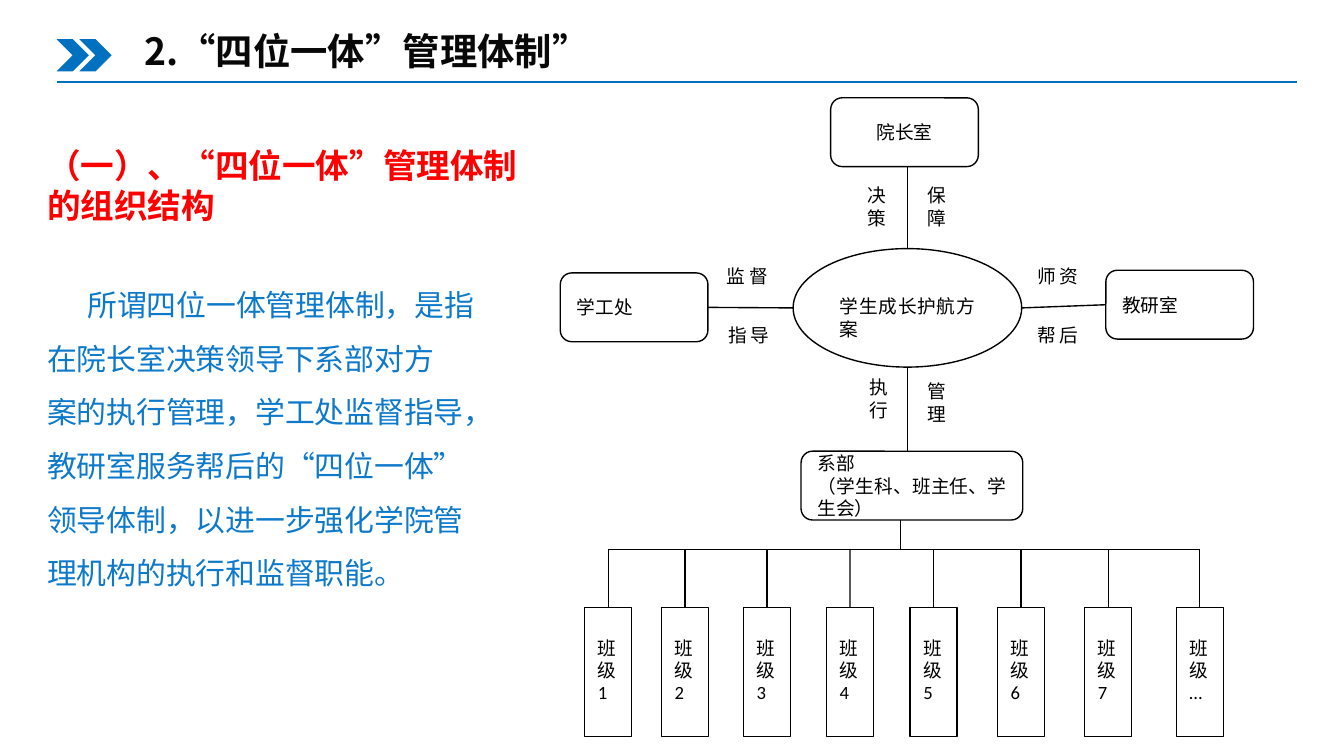
"""Build a slide on the organisation of the "four in one" management system."""
from dataclasses import dataclass

from lxml import etree
from pptx import Presentation
from pptx.dml.color import RGBColor
from pptx.enum.lang import MSO_LANGUAGE_ID
from pptx.enum.shapes import MSO_CONNECTOR, MSO_SHAPE
from pptx.enum.text import MSO_ANCHOR, MSO_AUTO_SIZE, PP_ALIGN
from pptx.oxml.ns import qn
from pptx.util import Cm, Pt

CHEVRON, OVAL = MSO_SHAPE.CHEVRON, MSO_SHAPE.OVAL
RECT, ROUNDED = MSO_SHAPE.RECTANGLE, MSO_SHAPE.ROUNDED_RECTANGLE
STRAIGHT = MSO_CONNECTOR.STRAIGHT
TOP, MIDDLE = MSO_ANCHOR.TOP, MSO_ANCHOR.MIDDLE
LEFT, CENTER, JUSTIFY = PP_ALIGN.LEFT, PP_ALIGN.CENTER, PP_ALIGN.JUSTIFY
FIT = MSO_AUTO_SIZE.SHAPE_TO_FIT_TEXT
CHINESE = MSO_LANGUAGE_ID.SIMPLIFIED_CHINESE
SIDE_TOP, SIDE_LEFT, SIDE_RIGHT = 0, 1, 3


@dataclass(frozen=True)
class Style:
    font: str
    size: float
    color: str
    bold: bool = False


@dataclass(frozen=True)
class Theme:
    east_asian: str = "Noto Sans CJK SC"
    title: Style = Style("Noto Sans CJK SC", 20, "080808", True)
    heading: Style = Style("Arial", 18, "FF0000", True)
    body: Style = Style("Arial", 16, "0D79CA")
    diagram: Style = Style("Calibri", 10, "000000")
    chevron: str = "0070C0"
    rule: str = "006EBC"
    ink: str = "000000"
    paper: str = "FFFFFF"
    line_width: float = 0.75


THEME = Theme()

TITLE = ["2.“四位一体”管理体制”"]
HEADING = ["（一）、“四位一体”管理体制", "的组织结构"]
BODY = [
    "所谓四位一体管理体制，是指",
    "在院长室决策领导下系部对方",
    "案的执行管理，学工处监督指导，",
    "教研室服务帮后的“四位一体”",
    "领导体制，以进一步强化学院管",
    "理机构的执行和监督职能。",
]
PLAN = ["学生成长护航方案"]
STUDENT_OFFICE = ["学工处"]
DEAN_OFFICE = ["院长室"]
TEACHING_OFFICE = ["教研室"]
DEPARTMENT = ["系部", "（学生科、班主任、学生会）"]
DOWN_LABELS = [("决 策", 16.15, 3.38), ("保 障", 17.27, 3.38),
               ("执 行", 16.18, 7.01), ("管 理", 17.27, 7.09)]
ACROSS_LABELS = [("监 督", 13.49, 4.88), ("指 导", 13.51, 5.99),
                 ("师 资", 19.35, 4.88), ("帮 后", 19.35, 5.99)]
CLASSES = [("1", 11.05), ("2", 12.5), ("3", 14.05), ("4", 15.62),
           ("5", 17.2), ("6", 18.85), ("7", 20.5), ("…", 22.23)]

OFFICE_SIZE = (2.79, 1.3)
DOWN_SIZE = (0.83, 1.17)
ACROSS_SIZE = (1.4, 0.74)
CLASS_SIZE = (0.89, 2.44)
CLASS_TOP, BUS_Y = 11.48, 10.39
PLAN_AT = (14.99, 4.7, 4.32, 2.24)
DEPARTMENT_AT = (15.14, 8.53, 4.19, 1.3)
DEAN_AT = (15.7, 1.85, *OFFICE_SIZE)
LOW_INSET = 0.55


def rgb(value):
    return RGBColor.from_string(value)


def write(frame, lines, style, align, spacing=None, first_indent=0):
    for number, line in enumerate(lines):
        paragraph = frame.add_paragraph() if number else frame.paragraphs[0]
        properties = paragraph._p.get_or_add_pPr()
        properties.set("marL", "0")
        properties.set("indent", "0" if number else str(Cm(first_indent)))
        etree.SubElement(properties, qn("a:buNone"))
        paragraph.alignment = align
        paragraph.space_before = Pt(0)
        if spacing:
            paragraph.line_spacing = spacing
        run = paragraph.add_run()
        run.text = line
        run.font.name = style.font
        east_asian = etree.SubElement(run.font._element, qn("a:ea"))
        east_asian.set("typeface", THEME.east_asian)
        run.font.size = Pt(style.size)
        run.font.bold = style.bold
        run.font.color.rgb = rgb(style.color)
        run.font.language_id = CHINESE


def fill_placeholder(holder, box, lines, style, align, anchor, spacing=None, first_indent=0):
    holder.left, holder.top, holder.width, holder.height = map(Cm, box)
    frame = holder.text_frame
    frame.margin_left = frame.margin_right = Cm(0.25)
    frame.margin_top = frame.margin_bottom = Cm(0.25)
    frame.word_wrap = False
    frame.auto_size = FIT
    frame.vertical_anchor = anchor
    write(frame, lines, style, align, spacing, first_indent)


def add_box(slide, kind, box, fill, outline=None):
    shape = slide.shapes.add_shape(kind, *map(Cm, box))
    shape.shadow.inherit = False
    shape.fill.solid()
    shape.fill.fore_color.rgb = rgb(fill)
    if outline:
        shape.line.color.rgb = rgb(outline)
        shape.line.width = Pt(THEME.line_width)
    else:
        shape.line.fill.background()
    return shape


def add_node(slide, kind, box, lines, outline=THEME.ink, anchor=MIDDLE,
             align=JUSTIFY, top_inset=0.13, vertical=False):
    node = add_box(slide, kind, box, THEME.paper, outline)
    frame = node.text_frame
    frame.word_wrap = True
    frame.vertical_anchor = anchor
    frame.margin_left = frame.margin_right = Cm(0.25)
    frame.margin_top, frame.margin_bottom = Cm(top_inset), Cm(0.13)
    if vertical:
        frame._txBody.bodyPr.set("vert", "eaVert")
    write(frame, lines, THEME.diagram, align)
    return node


def add_line(slide, start, end, color=THEME.ink):
    line = slide.shapes.add_connector(STRAIGHT, *map(Cm, (*start, *end)))
    line.line.color.rgb = rgb(color)
    line.line.width = Pt(THEME.line_width)
    etree.SubElement(line._element.spPr, qn("a:effectLst"))
    return line


def add_header(slide):
    for left in (1.07, 1.5):
        add_box(slide, CHEVRON, (left, 0.74, 0.61, 0.61), THEME.chevron)
    add_line(slide, (1.07, 1.55), (24.51, 1.55), THEME.rule)


def add_plan(slide):
    left, top, width, height = PLAN_AT
    middle_x, middle_y = left + width / 2, top + height / 2
    add_node(slide, OVAL, PLAN_AT, PLAN, anchor=TOP, top_inset=LOW_INSET)
    student = add_node(slide, ROUNDED, (10.59, 5.16, *OFFICE_SIZE), STUDENT_OFFICE)
    teaching = add_node(slide, ROUNDED, (20.9, 5.11, *OFFICE_SIZE), TEACHING_OFFICE)
    add_node(slide, ROUNDED, DEAN_AT, DEAN_OFFICE, align=CENTER)
    add_node(slide, ROUNDED, DEPARTMENT_AT, DEPARTMENT)

    student_link = add_line(slide, (13.39, middle_y), (left, middle_y))
    student_link.begin_connect(student, SIDE_RIGHT)
    teaching_link = add_line(slide, (left + width, middle_y), (20.9, middle_y))
    teaching_link.end_connect(teaching, SIDE_LEFT)
    add_line(slide, (middle_x, DEAN_AT[1] + DEAN_AT[3]), (middle_x, top))
    add_line(slide, (middle_x, top + height), (middle_x, DEPARTMENT_AT[1]))

    for labels, size, anchor, vertical in ((DOWN_LABELS, DOWN_SIZE, MIDDLE, True),
                                           (ACROSS_LABELS, ACROSS_SIZE, TOP, False)):
        for label, x, y in labels:
            add_node(slide, RECT, (x, y, *size), [label], THEME.paper, anchor,
                     vertical=vertical)


def add_classes(slide):
    centers = [left + CLASS_SIZE[0] / 2 for _, left in CLASSES]
    add_line(slide, (17.02, DEPARTMENT_AT[1] + DEPARTMENT_AT[3]), (17.02, BUS_Y))
    add_line(slide, (centers[0], BUS_Y), (centers[-1], BUS_Y))
    for (number, left), center in zip(CLASSES, centers):
        room = add_node(slide, RECT, (left, CLASS_TOP, *CLASS_SIZE), ["班级", number],
                        anchor=TOP, top_inset=LOW_INSET)
        drop = add_line(slide, (center, BUS_Y), (center, CLASS_TOP))
        drop.end_connect(room, SIDE_TOP)


def main():
    deck = Presentation()
    deck.slide_width, deck.slide_height = Cm(25.4), Cm(14.29)
    slide = deck.slides.add_slide(deck.slide_layouts[3])
    title, heading, body = slide.placeholders
    fill_placeholder(title, (2.34, 0.38, 9.19, 1.27), TITLE, THEME.title, CENTER, MIDDLE, 0.9)
    fill_placeholder(heading, (0.64, 2.49, 9.55, 2.06), HEADING, THEME.heading, LEFT, TOP)
    fill_placeholder(body, (0.64, 4.83, 9.07, 6.53), BODY, THEME.body, LEFT, TOP, 1.5, 0.76)
    add_header(slide)
    add_plan(slide)
    add_classes(slide)
    deck.save("out.pptx")


if __name__ == "__main__":
    main()
